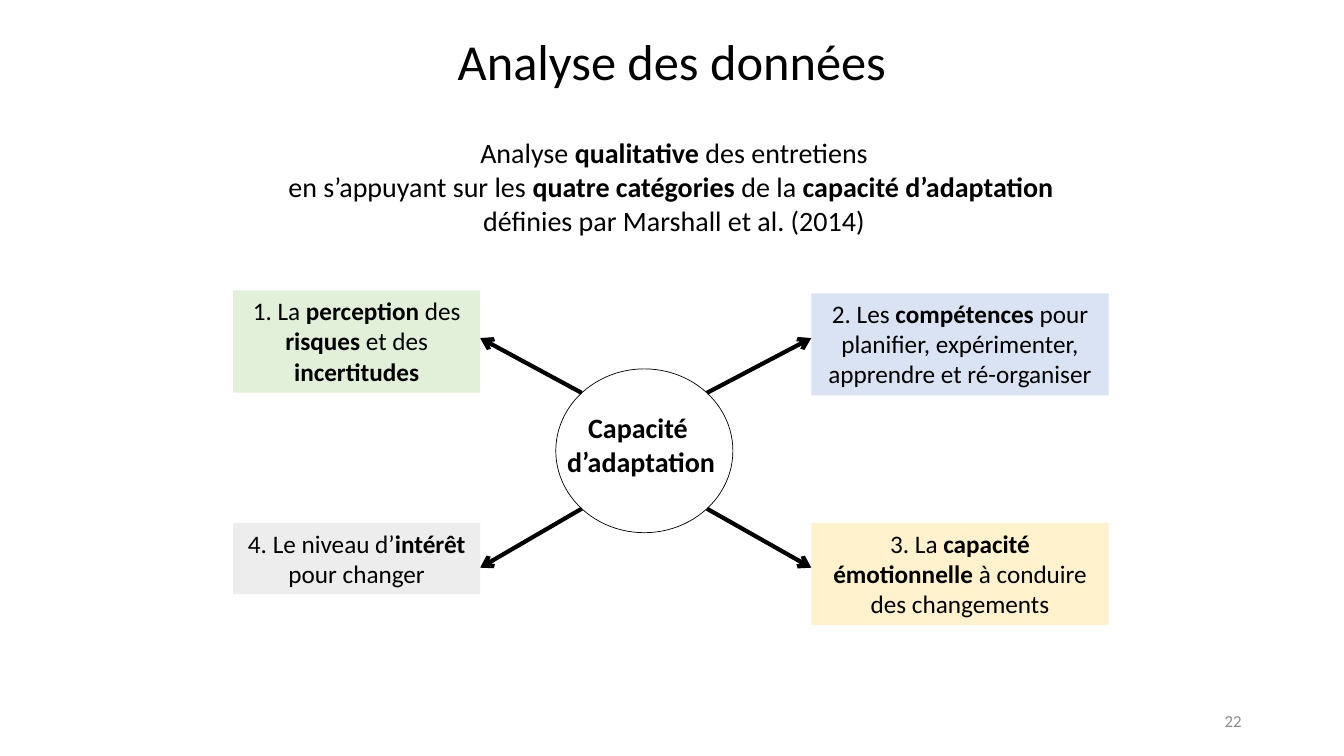
from dataclasses import dataclass
from lxml.etree import SubElement as Sub
from pptx import Presentation
from pptx.dml.color import RGBColor as RGB
from pptx.enum.shapes import MSO_CONNECTOR as Link, MSO_SHAPE as Kind
from pptx.enum.text import MSO_ANCHOR as Anchor, PP_ALIGN as Align
from pptx.oxml.ns import qn
from pptx.util import Pt


@dataclass(frozen=True)
class Theme:
    """Colours, font and type sizes."""
    font: str = "Calibri"
    ink: str = "000000"
    mute: str = "8C8C8C"
    green: str = "E2F0D9"
    blue: str = "DAE3F3"
    grey: str = "EDEDED"
    gold: str = "FFF2CC"
    head: int = 36
    lead: int = 20
    body: int = 18
    foot: int = 12


T = Theme()


def write(shape, lines, size, align=Align.CENTER, tone=T.ink, anchor=Anchor.TOP, wrap=True):
    """Fill a shape with lines in which *stars* mark bold words."""
    frame = shape.text_frame
    frame.word_wrap = wrap
    frame.vertical_anchor = anchor
    for i, line in enumerate(lines):
        para = frame.paragraphs[0] if i == 0 else frame.add_paragraph()
        para.alignment = align
        para.font.name = T.font
        para.font.size = Pt(size)
        para.font.color.rgb = RGB.from_string(tone)
        for j, part in enumerate(line.split("*")):
            if part:
                run = para.add_run()
                run.text = part
                run.font.bold = j % 2 == 1


def label(slide, box, lines, size, **style):
    """Place a text box."""
    write(slide.shapes.add_textbox(*map(Pt, box)), lines, size, **style)


def card(slide, box, text, fill):
    """Place a filled category card."""
    shape = slide.shapes.add_shape(Kind.RECTANGLE, *map(Pt, box))
    shape.shadow.inherit = False
    shape.fill.solid()
    shape.fill.fore_color.rgb = RGB.from_string(fill)
    shape.line.fill.background()
    write(shape, [text], T.body)


def arrow(slide, start, end):
    """Draw a thick line with an open arrowhead at its end."""
    line = slide.shapes.add_connector(Link.STRAIGHT, *map(Pt, start + end))
    line.line.color.rgb = RGB.from_string(T.ink)
    line.line.width = Pt(3)
    Sub(line.line._get_or_add_ln(), qn("a:tailEnd"), type="arrow")
    Sub(line._element.spPr, qn("a:effectLst"))


def hub(slide, box):
    """Draw the central circle and its name."""
    x, y, w, h = box
    ring = slide.shapes.add_shape(Kind.OVAL, *map(Pt, box))
    ring.shadow.inherit = False
    ring.fill.background()
    ring.line.color.rgb = RGB.from_string(T.ink)
    ring.line.width = Pt(0.5)
    label(slide, (x, y + 26.5, w - 4.5, 55.5), ["*Capacité *", "*d’adaptation*"], T.lead, wrap=False)


def wheel(slide, box):
    """Lay out the hub, four cards and the arrows between them."""
    x, y, w, h = box
    left, right = 176.5, 212.5
    far, low = x + w - right, y + 166
    ring = rx, ry, rw, rh = x + 230.5, y + 56, 126.5, 117
    hub(slide, ring)
    cards = [
        ((x, y, left, 73), "1. La *perception* des *risques* et des *incertitudes*", T.green),
        ((far, y + 2, right, 73),
         "2. Les *compétences* pour planifier, expérimenter, apprendre et ré-organiser", T.blue),
        ((x, low, left, 51), "4. Le niveau d’*intérêt* pour changer", T.grey),
        ((far, low, right, 73), "3. La *capacité émotionnelle* à conduire des changements", T.gold),
    ]
    for spot, text, fill in cards:
        card(slide, spot, text, fill)
    near = 0.5 - 0.5 ** 1.5
    for px, ex in ((near, x + left), (1 - near, far)):
        for py, ey in ((near, y + 34), (1 - near, y + 198)):
            arrow(slide, (rx + px * rw, ry + py * rh), (ex, ey))


def build(slide):
    """Place the title, lead text, wheel and page number."""
    label(slide, (156, -2, 648, 90), ["Analyse des données"], T.head, anchor=Anchor.MIDDLE)
    label(slide, (678, 500.5, 216, 28.5), ["22"], T.foot, align=Align.RIGHT, tone=T.mute,
          anchor=Anchor.MIDDLE)
    wheel(slide, (166.5, 207.5, 625.5, 239))
    label(slide, (121.5, 93.5, 720, 80), [
        "Analyse *qualitative* des entretiens",
        "en s’appuyant sur les *quatre catégories *de la *capacité d’adaptation *",
        "définies par Marshall et al. (2014)",
    ], T.lead)


def main():
    """Make and save the deck."""
    deck = Presentation()
    deck.slide_width, deck.slide_height = Pt(960), Pt(540)
    build(deck.slides.add_slide(deck.slide_layouts[6]))
    deck.save("out.pptx")


if __name__ == "__main__":
    main()
